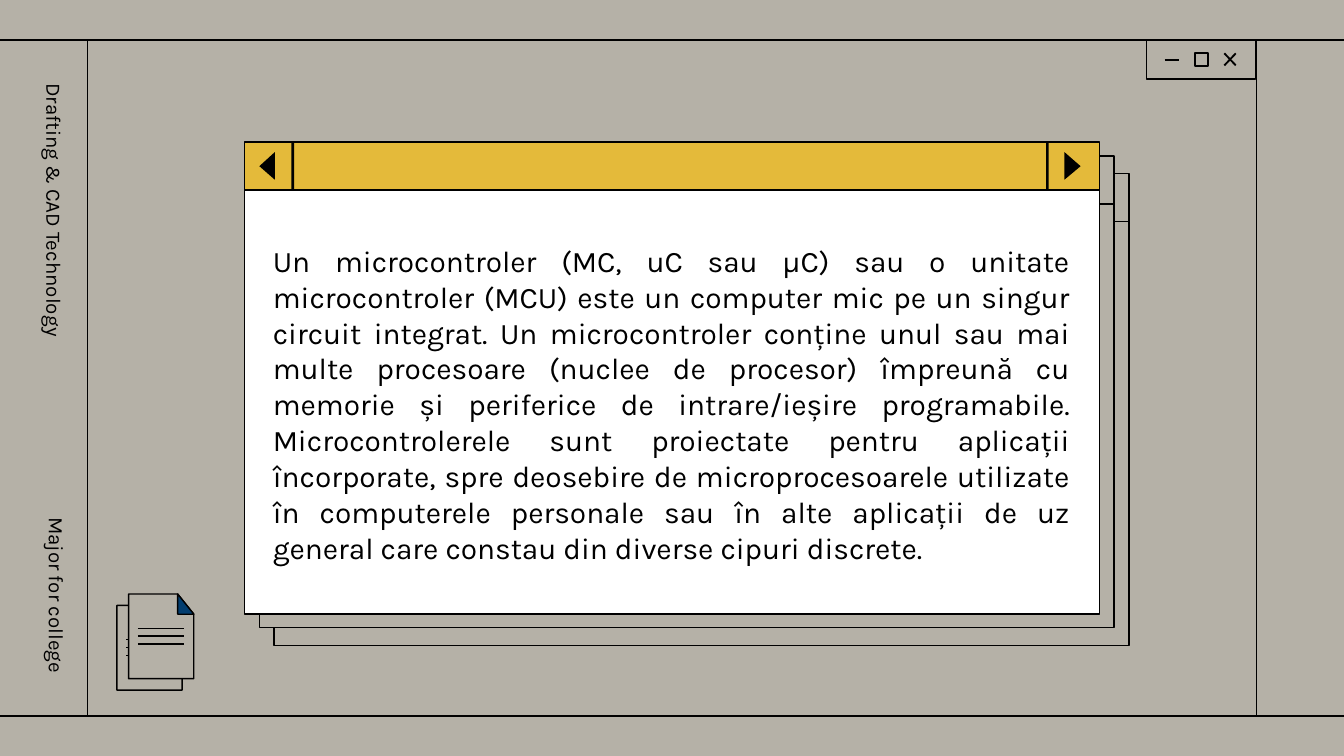
"""Build a slide with a retro window that defines the microcontroller."""
import dataclasses
import typing

import lxml.etree
import pptx
import pptx.dml.color
import pptx.enum.shapes
import pptx.enum.text
import pptx.oxml.ns
import pptx.util

RGB = pptx.dml.color.RGBColor
ALIGN = pptx.enum.text.PP_ALIGN
Color = typing.Optional[RGB]
Point = typing.Tuple[float, float]

STONE = RGB(0xB5, 0xB1, 0xA7)
GOLD = RGB(0xE4, 0xBA, 0x3A)
NAVY = RGB(0x02, 0x3D, 0x6F)
BLACK = RGB(0, 0, 0)
WHITE = RGB(0xFF, 0xFF, 0xFF)

WIDE = pptx.util.Inches(10)
HIGH = WIDE * 9 // 16
COLS, ROWS = 100, 56.25
FONT = "Karla"
THIN, BOLD = 0.75, 1
TOP, BASE, LEFT, RIGHT = 2.98, 53.27, 6.5, 93.5
PANE_W, BAR_H, PANE_H = 63.6, 3.57, 31.55

BODY = (
    "Un microcontroler (MC, uC sau μC) sau o unitate microcontroler (MCU) este un "
    "computer mic pe un singur circuit integrat. Un microcontroler conține unul sau "
    "mai multe procesoare (nuclee de procesor) împreună cu memorie și periferice de "
    "intrare/ieșire programabile. Microcontrolerele sunt proiectate pentru aplicații "
    "încorporate, spre deosebire de microprocesoarele utilizate în computerele "
    "personale sau în alte aplicații de uz general care constau din diverse cipuri "
    "discrete."
)


@dataclasses.dataclass(frozen=True)
class Pane:
    """A window, placed by its top left corner on the grid."""
    x: float
    y: float
    bar: Color
    fill: Color
    ink: Color


@dataclasses.dataclass(frozen=True)
class Page:
    """A sheet of paper with a folded corner."""
    x: float
    y: float
    fold: RGB


@dataclasses.dataclass(frozen=True)
class Label:
    """A line of text turned to run down the left margin."""
    text: str
    x: float
    y: float
    w: float
    align: ALIGN
    pitch: float
    after: float


PANES = (
    Pane(20.4, 12.9, None, None, None),
    Pane(19.3, 11.6, STONE, STONE, STONE),
    Pane(18.2, 10.57, GOLD, WHITE, BLACK),
)
PAGES = (Page(8.7, 45.05, GOLD), Page(9.57, 44.2, NAVY))
LABELS = (
    Label("Drafting & CAD Technology", -7.4, 15.7, 23.2, ALIGN.LEFT, 1.15, 12),
    Label("Major for college", -6.1, 39.6, 20.7, ALIGN.RIGHT, 1, 0),
)


def across(cols: float) -> int:
    """Turn grid columns into a length."""
    return round(WIDE * cols / COLS)


def down(rows: float) -> int:
    """Turn grid rows into a length."""
    return round(HIGH * rows / ROWS)


def paint(shape, fill: Color, line: Color, width: float = THIN) -> None:
    """Set the fill and outline of a shape and drop its shadow."""
    shape.shadow.inherit = False
    if fill is None:
        shape.fill.background()
    else:
        shape.fill.solid()
        shape.fill.fore_color.rgb = fill
    if line is None:
        shape.line.fill.background()
    else:
        shape.line.color.rgb = line
        shape.line.width = pptx.util.Pt(width)


def box(slide, x: float, y: float, w: float, h: float, fill: Color,
        line: Color = BLACK, width: float = THIN) -> None:
    """Draw a rectangle."""
    kind = pptx.enum.shapes.MSO_SHAPE.RECTANGLE
    shape = slide.shapes.add_shape(kind, across(x), down(y), across(w), down(h))
    paint(shape, fill, line, width)


def outline(slide, points: typing.Sequence[Point], fill: Color,
            line: Color = BLACK) -> None:
    """Draw a closed polygon."""
    spots = [(across(x), down(y)) for x, y in points]
    pen = slide.shapes.build_freeform(*spots[0])
    pen.add_line_segments(spots[1:], close=True)
    paint(pen.convert_to_shape(), fill, line)


def rule(slide, start: Point, end: Point, width: float = THIN) -> None:
    """Draw a straight black line."""
    kind = pptx.enum.shapes.MSO_CONNECTOR.STRAIGHT
    line = slide.shapes.add_connector(
        kind, across(start[0]), down(start[1]), across(end[0]), down(end[1]))
    line.line.color.rgb = BLACK
    line.line.width = pptx.util.Pt(width)
    props = line._element.spPr
    lxml.etree.SubElement(props, pptx.oxml.ns.qn("a:effectLst"))


def write(shape, text: str, size: float, align: ALIGN, pitch: float = 1,
          after: float = 0) -> None:
    """Fill a shape with one paragraph."""
    frame = shape.text_frame
    frame.word_wrap = True
    frame.auto_size = pptx.enum.text.MSO_AUTO_SIZE.NONE
    frame.vertical_anchor = pptx.enum.text.MSO_ANCHOR.MIDDLE
    for side in ("left", "top", "right", "bottom"):
        setattr(frame, f"margin_{side}", across(1))
    frame.text = text
    para = frame.paragraphs[0]
    para.alignment = align
    para.line_spacing = pitch
    para.space_before = pptx.util.Pt(0)
    para.space_after = pptx.util.Pt(after)
    para.font.name = FONT
    para.font.size = pptx.util.Pt(size)
    para.font.color.rgb = BLACK


def draw_frame(slide) -> None:
    """Draw the outer rules and the window buttons."""
    box(slide, 85.3, TOP, 8.1, 2.9, STONE)
    rule(slide, (86.65, 4.47), (87.7, 4.47), BOLD)
    box(slide, 88.9, 3.95, 0.98, 0.98, None, BLACK, BOLD)
    rule(slide, (91.1, 3.97), (91.95, 4.87), BOLD)
    rule(slide, (91.1, 4.87), (91.95, 3.97), BOLD)
    for y in (TOP, BASE):
        rule(slide, (0, y), (COLS, y))
    for x in (LEFT, RIGHT):
        rule(slide, (x, BASE), (x, TOP))


def draw_pane(slide, pane: Pane) -> None:
    """Draw a window with its bar, dividers and arrows."""
    x, y = pane.x, pane.y
    box(slide, x, y + BAR_H, PANE_W, PANE_H, pane.fill)
    box(slide, x, y, PANE_W, BAR_H, pane.bar)
    if pane.ink is None:
        return
    for gap in (3.48, 59.63):
        box(slide, x + gap, y, 0.2, BAR_H, pane.ink, None)
    for back, tip in ((2.25, 1.1), (61, 62.2)):
        points = ((x + back, y + 0.75), (x + tip, y + 1.8), (x + back, y + 2.8))
        outline(slide, points, pane.ink, None)


def draw_page(slide, page: Page) -> None:
    """Draw a sheet with its fold and three lines of writing."""
    x, y = page.x, page.y
    crease, edge, corner = (x + 3.65, y), (x + 4.85, y + 1.5), (x + 3.65, y + 1.5)
    outline(slide, ((x, y), (x, y + 6.3), (x + 4.85, y + 6.3), edge, crease), STONE)
    outline(slide, (crease, corner, edge), page.fold)
    for step in range(3):
        row = y + 2.55 + 0.58 * step
        rule(slide, (x + 0.7, row), (x + 4.1, row))


def main() -> None:
    """Build and save the slide."""
    deck = pptx.Presentation()
    deck.slide_width, deck.slide_height = WIDE, HIGH
    slide = deck.slides.add_slide(deck.slide_layouts[0])
    slide.background.fill.solid()
    slide.background.fill.fore_color.rgb = STONE
    title, body = slide.placeholders
    tree = title._element.getparent()
    tree.remove(title._element)

    draw_frame(slide)
    for pane in PANES:
        draw_pane(slide, pane)
    body.left, body.top = across(19.3), down(15.2)
    body.width, body.height = across(61.33), down(29.7)
    write(body, BODY, 16, ALIGN.JUSTIFY)
    tree.append(body._element)
    for label in LABELS:
        shape = slide.shapes.add_textbox(
            across(label.x), down(label.y), across(label.w), down(2.2))
        shape.rotation = 90
        write(shape, label.text, 11, label.align, label.pitch, label.after)
    for page in PAGES:
        draw_page(slide, page)
    deck.save("out.pptx")


if __name__ == "__main__":
    main()
